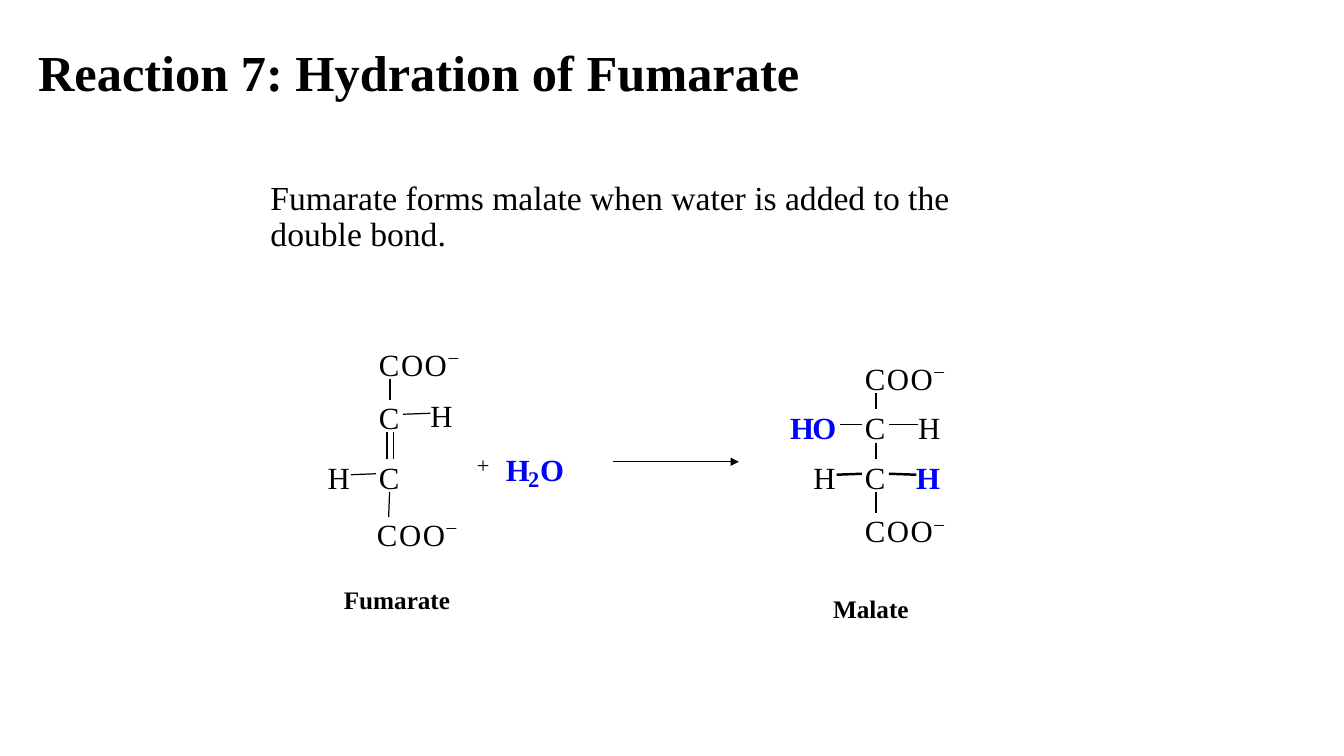
from lxml.etree import SubElement
from pptx import Presentation
from pptx.dml.color import RGBColor
from pptx.enum.shapes import MSO_CONNECTOR
from pptx.enum.text import MSO_ANCHOR, MSO_AUTO_SIZE, PP_ALIGN
from pptx.oxml.ns import qn
from pptx.util import Pt

TITLE = "Reaction 7: Hydration of Fumarate"
BODY = "Fumarate forms malate when water is added to the double bond."
FONT = "Times New Roman"
BLACK, BLUE = "000000", "0000FF"
THIN, BOND, HEAVY = 0.75, 0.88, 1.75

# Atoms: text, left, top, colour. Bonds: x1, y1, x2, y2, width.
FUMARATE = {
    "carboxylates": [(270.7, 247), (269.3, 368.6)],
    "atoms": [
        ("C", 270.7, 285.1, BLACK), ("H", 307.4, 283.7, BLACK),
        ("H", 234, 327.6, BLACK), ("C", 270.7, 327.6, BLACK),
    ],
    "bonds": [
        (278.6, 285.8, 278.6, 270.7, BOND), (288, 295.9, 307.4, 295.2, BOND),
        (276.5, 308.9, 276.5, 327.6, BOND), (280.8, 308.9, 280.8, 327.6, BOND),
        (268.6, 338.4, 250.6, 339.1, BOND), (278.3, 351.4, 277.6, 369.4, BOND),
    ],
}
MALATE = {
    "carboxylates": [(617.8, 257), (617.8, 365.8)],
    "atoms": [
        ("H", 564.5, 292.3, BLUE), ("O", 580.3, 292.3, BLUE),
        ("C", 617.8, 292.3, BLACK), ("H", 655.9, 292.3, BLACK),
        ("H", 581, 327.6, BLACK), ("C", 617.8, 327.6, BLACK),
        ("H", 654.5, 327.6, BLUE),
    ],
    "bonds": [
        (625.7, 280.8, 625.7, 292.3, BOND), (625.7, 316.1, 625.7, 327.6, BOND),
        (625.7, 351.4, 625.7, 366.5, BOND), (615.6, 303.1, 599.8, 303.1, BOND),
        (635, 303.1, 655.9, 303.1, BOND), (615.6, 338.4, 597.6, 339.1, HEAVY),
        (635, 338.4, 654.5, 339.1, HEAVY),
    ],
}
CARBOXYLATE = [("C", 0), ("O", 15.8), ("O", 32.7)]
MINUS_SHIFT = (49.7, -4)
WATER = [("H", 361.4, 321.8, 22), ("2", 377.3, 332.6, 16), ("O", 385.9, 321.8, 22)]
NAMES = [("Fumarate", 238.5, 414), ("Malate", 588, 420)]
ARROW = (437.8, 329.8, 527.8, 329.8, THIN)


def color(value):
    return RGBColor.from_string(value)


def add_span(para, text, size, hue=BLACK, bold=False):
    span = para.add_run()
    span.text = text
    span.font.name = FONT
    span.font.size = Pt(size)
    span.font.bold = bold
    span.font.color.rgb = color(hue)
    return span


def add_symbol(shapes, text, left, top, hue=BLACK, size=22):
    width, height = (16, 26.6) if size == 22 else (8, 19.4)
    box = shapes.add_textbox(Pt(left), Pt(top), Pt(width), Pt(height))
    frame = box.text_frame
    frame.margin_left = frame.margin_right = 0
    frame.margin_top = frame.margin_bottom = 0
    frame.word_wrap = False
    frame.auto_size = MSO_AUTO_SIZE.SHAPE_TO_FIT_TEXT
    return add_span(frame.paragraphs[0], text, size, hue, hue == BLUE)


def add_line(shapes, x1, y1, x2, y2, width):
    line = shapes.add_connector(MSO_CONNECTOR.STRAIGHT, Pt(x1), Pt(y1), Pt(x2), Pt(y2))
    line.line.color.rgb = color(BLACK)
    line.line.width = Pt(width)
    SubElement(line._element.spPr, qn("a:effectLst"))
    return line


def add_molecule(page, molecule):
    shapes = page.shapes.add_group_shape().shapes
    for bond in molecule["bonds"]:
        add_line(shapes, *bond)
    for atom in molecule["atoms"]:
        add_symbol(shapes, *atom)
    for left, top in molecule["carboxylates"]:
        for text, shift in CARBOXYLATE:
            add_symbol(shapes, text, left + shift, top)
        across, down = MINUS_SHIFT
        minus = add_symbol(shapes, "–", left + across, top + down, size=24)
        minus._r.get_or_add_rPr().set("baseline", "30000")


def fill_placeholder(holder, text, place, size, bold, anchor, before):
    holder.left, holder.top, holder.width, holder.height = map(Pt, place)
    frame = holder.text_frame
    frame.auto_size = MSO_AUTO_SIZE.NONE
    frame.word_wrap = True
    frame.vertical_anchor = anchor
    para = frame.paragraphs[0]
    para.alignment = PP_ALIGN.LEFT
    para.line_spacing = 0.9
    para.space_before = Pt(before)
    properties = para._p.get_or_add_pPr()
    properties.set("marL", "0")
    properties.set("indent", "0")
    SubElement(properties, qn("a:buNone"))
    add_span(para, text, size, bold=bold)


def main():
    deck = Presentation()
    deck.slide_width, deck.slide_height = Pt(960), Pt(540)
    page = deck.slides.add_slide(deck.slide_layouts[1])
    title, body = page.placeholders
    fill_placeholder(title, TITLE, (20, 18, 842, 72), 36, True, MSO_ANCHOR.MIDDLE, 0)
    fill_placeholder(body, BODY, (186, 126, 558, 336), 24, False, MSO_ANCHOR.TOP, 10)

    arrow = add_line(page.shapes, *ARROW)
    SubElement(arrow.line._get_or_add_ln(), qn("a:tailEnd"), type="triangle")

    water = page.shapes.add_group_shape().shapes
    add_symbol(water, "+", 340.7, 322.6, size=16)
    for text, left, top, size in WATER:
        add_symbol(water, text, left, top, BLUE, size)

    add_molecule(page, MALATE)
    add_molecule(page, FUMARATE)

    for name, left, top in NAMES:
        box = page.shapes.add_textbox(Pt(left), Pt(top), Pt(126), Pt(28.8))
        box.text_frame.word_wrap = True
        add_span(box.text_frame.paragraphs[0], name, 18, bold=True)

    deck.save("out.pptx")


if __name__ == "__main__":
    main()
